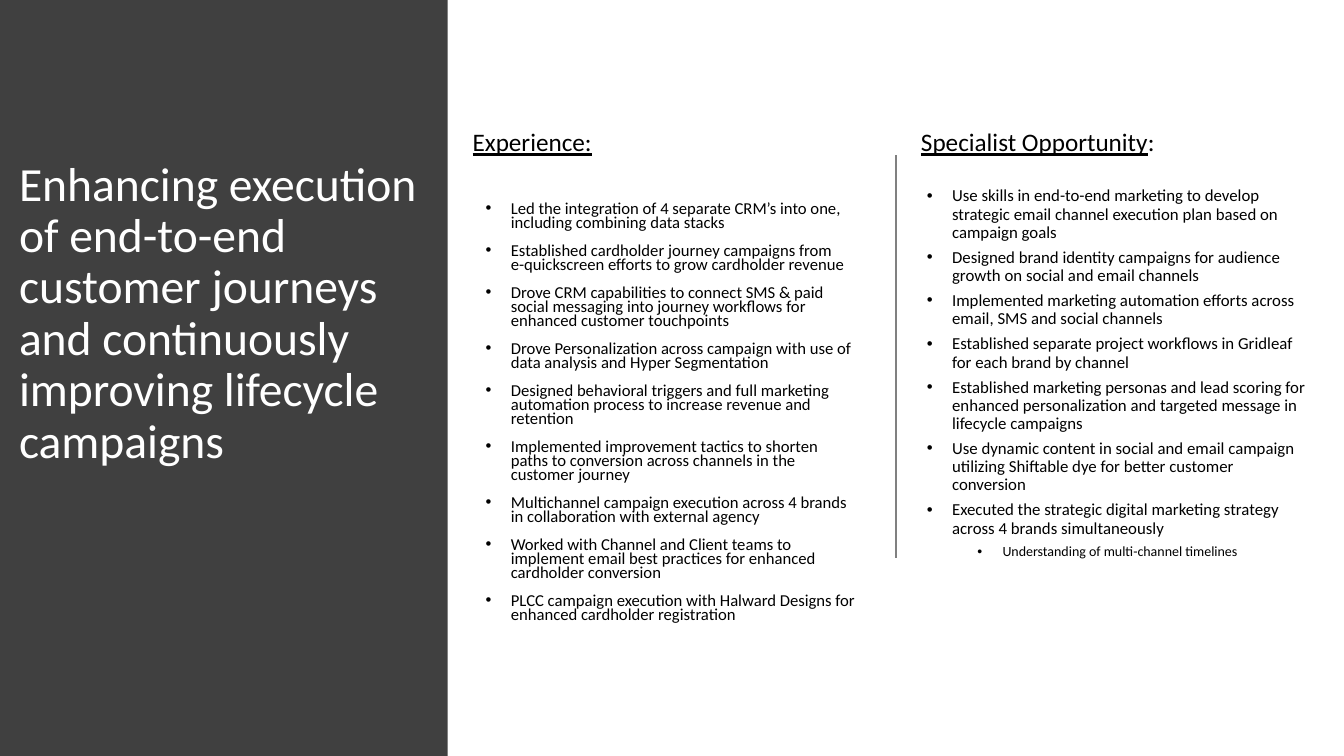
from lxml import etree
from pptx import Presentation
from pptx import util as u
from pptx.dml import color
from pptx.enum import shapes, text
from pptx.oxml import ns

FONT = "Calibri"
BLACK = "000000"
HEADING_TOP = 3.07
HEADING_SIZE = (6.76, 1.02)
INDENT = 0.635

TITLE = (
    "Enhancing execution of end-to-end customer journeys "
    "and continuously improving lifecycle campaigns"
)
EXPERIENCE = [
    "Led the integration of 4 separate CRM’s into one, including combining data stacks",
    "Established cardholder journey campaigns from\n"
    "e-quickscreen efforts to grow cardholder revenue",
    "Drove CRM capabilities to connect SMS & paid social messaging into journey "
    "workflows for enhanced customer touchpoints",
    "Drove Personalization across campaign with use of data analysis and Hyper Segmentation",
    "Designed behavioral triggers and full marketing automation process to increase "
    "revenue and retention",
    "Implemented improvement tactics to shorten paths to conversion across channels "
    "in the customer journey",
    "Multichannel campaign execution across 4 brands in collaboration with external agency",
    "Worked with Channel and Client teams to implement email best practices for "
    "enhanced cardholder conversion",
    "PLCC campaign execution with Halward Designs for enhanced cardholder registration",
]
OPPORTUNITY = [
    "Use skills in end-to-end marketing to develop strategic email channel execution "
    "plan based on campaign goals",
    "Designed brand identity campaigns for audience growth on social and email channels",
    "Implemented marketing automation efforts across email, SMS and social channels",
    "Established separate project workflows in Gridleaf for each brand by channel",
    "Established marketing personas and lead scoring for enhanced personalization and "
    "targeted message in lifecycle campaigns",
    "Use dynamic content in social and email campaign utilizing Shiftable dye for "
    "better customer conversion",
    "Executed the strategic digital marketing strategy across 4 brands simultaneously",
]
OPPORTUNITY_DETAIL = "Understanding of multi-channel timelines"


def rgb(value):
    return color.RGBColor.from_string(value)


def set_font(paragraph, size, hex_color=BLACK):
    paragraph.font.name = FONT
    paragraph.font.size = u.Pt(size)
    paragraph.font.color.rgb = rgb(hex_color)


def add_panel(slide, width, height, hex_color):
    panel = slide.shapes.add_shape(shapes.MSO_SHAPE.RECTANGLE, 0, 0, width, height)
    panel.shadow.inherit = False
    panel.fill.solid()
    panel.fill.fore_color.rgb = rgb(hex_color)
    panel.line.fill.background()


def add_text_frame(slide, left, top, width, height):
    box = slide.shapes.add_textbox(u.Cm(left), u.Cm(top), u.Cm(width), u.Cm(height))
    box.text_frame.word_wrap = True
    box.text_frame.vertical_anchor = text.MSO_ANCHOR.TOP
    return box.text_frame


def add_title(slide):
    paragraph = add_text_frame(slide, 0.23, 3.91, 10.72, 12.12).paragraphs[0]
    paragraph.text = TITLE
    paragraph.line_spacing = 0.9
    set_font(paragraph, 34, "FFFFFF")


def add_heading(slide, left, underlined, plain=""):
    frame = add_text_frame(slide, left, HEADING_TOP, *HEADING_SIZE)
    frame.auto_size = text.MSO_AUTO_SIZE.SHAPE_TO_FIT_TEXT
    paragraph = frame.paragraphs[0]
    set_font(paragraph, 18)
    run = paragraph.add_run()
    run.text = underlined
    run.font.underline = True
    if plain:
        paragraph.add_run().text = plain


def add_bullet(paragraph, level):
    properties = paragraph._p.get_or_add_pPr()
    properties.set("marL", str(u.Cm(INDENT * (1 + 2 * level))))
    properties.set("indent", str(-u.Cm(INDENT)))
    etree.SubElement(properties, ns.qn("a:buFont"), typeface="Arial")
    etree.SubElement(properties, ns.qn("a:buChar"), char="•")
    paragraph.level = level


def add_bullet_list(slide, bounds, items, line_spacing, space_before):
    frame = add_text_frame(slide, *bounds)
    for index, (content, level, size) in enumerate(items):
        paragraph = frame.add_paragraph() if index else frame.paragraphs[0]
        paragraph.text = content
        add_bullet(paragraph, level)
        paragraph.line_spacing = line_spacing
        paragraph.space_before = u.Pt(space_before if index else 0)
        set_font(paragraph, size)


def add_divider(slide, x, top, bottom):
    line = slide.shapes.add_connector(
        shapes.MSO_CONNECTOR.STRAIGHT, u.Cm(x), u.Cm(top), u.Cm(x), u.Cm(bottom)
    )
    line.line.color.rgb = rgb("808080")
    line.line.width = u.Pt(1)
    etree.SubElement(line._element.spPr, ns.qn("a:effectLst"))


def main():
    presentation = Presentation()
    presentation.slide_width = u.Cm(33.87)
    presentation.slide_height = u.Cm(19.05)
    slide = presentation.slides.add_slide(presentation.slide_layouts[6])

    add_panel(slide, u.Cm(11.28), presentation.slide_height, "404040")
    add_title(slide)

    experience = [(content, 0, 11.9) for content in EXPERIENCE]
    add_bullet_list(slide, (11.99, 5, 9.88, 11.61), experience, 0.7, 10)
    add_divider(slide, 22.58, 3.91, 14.07)

    opportunity = [(content, 1, 12) for content in OPPORTUNITY]
    opportunity.append((OPPORTUNITY_DETAIL, 2, 10))
    add_bullet_list(slide, (21.84, 4.6, 11.46, 12.12), opportunity, 0.9, 5)

    add_heading(slide, 22.96, "Specialist Opportunity", ":")
    add_heading(slide, 11.66, "Experience:")
    presentation.save("out.pptx")


if __name__ == "__main__":
    main()
